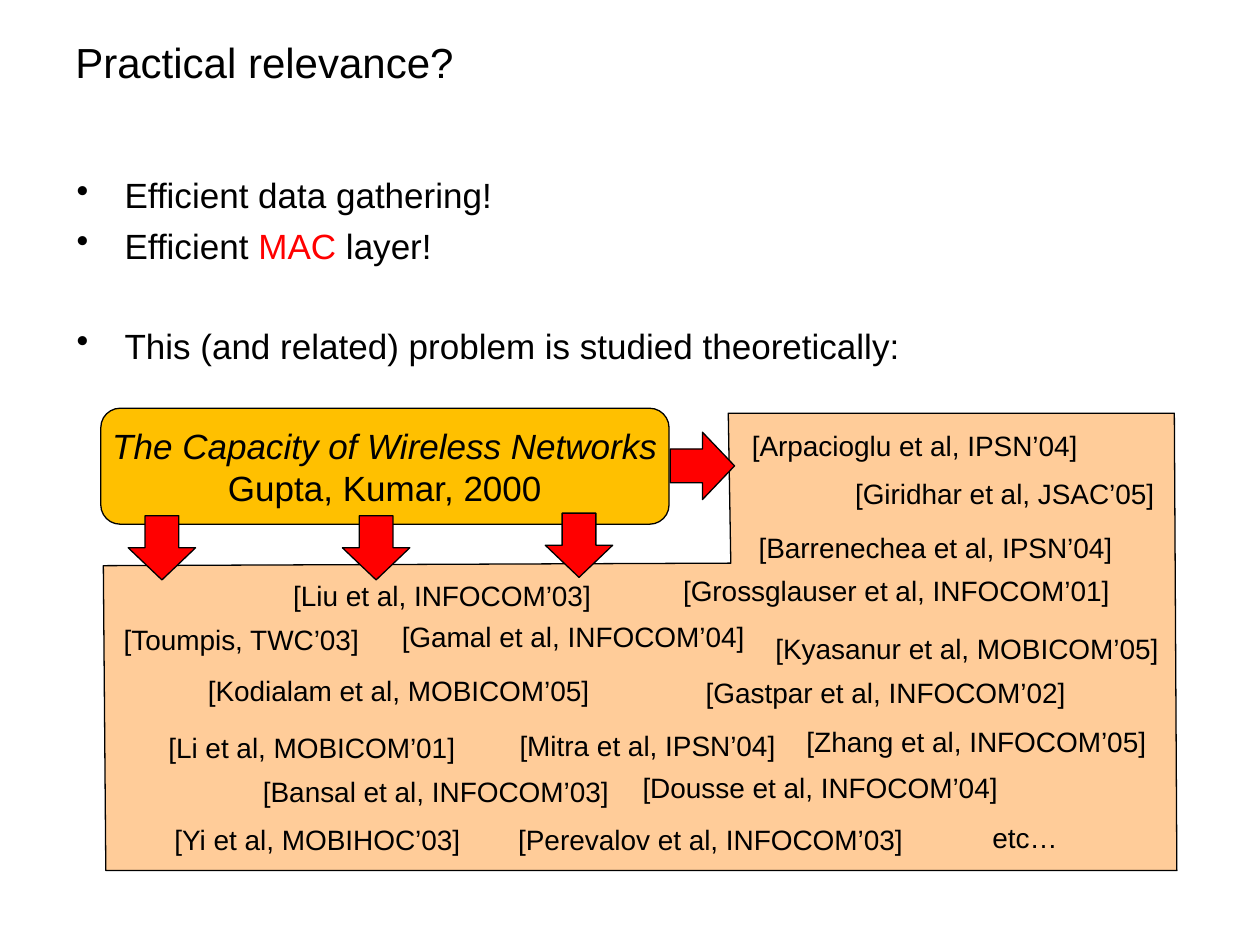
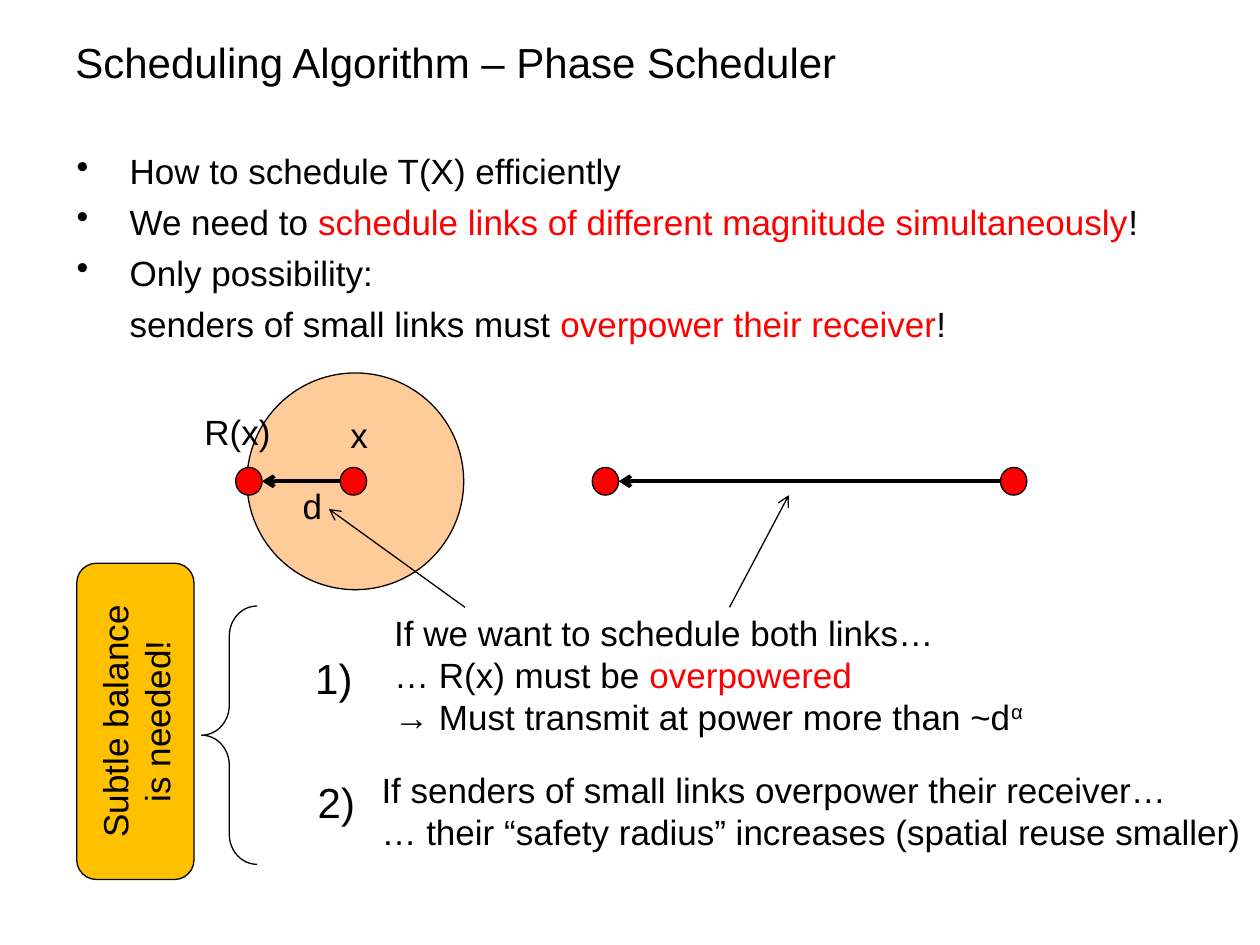
from dataclasses import dataclass
from lxml import etree
from pptx import Presentation
from pptx.dml.color import RGBColor
from pptx.enum.shapes import MSO_CONNECTOR, MSO_SHAPE
from pptx.enum.text import MSO_ANCHOR, PP_ALIGN
from pptx.oxml.ns import qn
from pptx.util import Inches, Pt

STRAIGHT = MSO_CONNECTOR.STRAIGHT
OVAL, BRACE = MSO_SHAPE.OVAL, MSO_SHAPE.LEFT_BRACE
ROUNDED, ARROW = MSO_SHAPE.ROUNDED_RECTANGLE, MSO_SHAPE.RIGHT_ARROW
MIDDLE, TOP = MSO_ANCHOR.MIDDLE, MSO_ANCHOR.TOP
LEFT, CENTER = PP_ALIGN.LEFT, PP_ALIGN.CENTER


@dataclass(frozen=True)
class Theme:
    font: str = "Arial"
    ink: str = "000000"
    accent: str = "FF0000"
    callout: str = "FFC000"
    area: str = "FFCC99"
    title: int = 24
    body: int = 20
    citation: int = 16
    thin: float = 0.75
    thick: float = 2.25
    bullet_gap: int = 5
    section_gap: int = 33


THEME = Theme()
COLUMNS, ROWS, CELL = 100, 75, Inches(0.1)
TITLE_BOX = (5, 2.2, 90, 5.4)
RED, ITALIC, SUPER = "red", "italic", "super"

RELEVANCE = {
    "title": "Practical relevance?",
    "body_top": 13.3,
    "indent": 3.8,
    "bullets": [
        (["Efficient data gathering!"], True, 0),
        (["Efficient ", ("MAC", RED), " layer!"], True, THEME.bullet_gap),
        (["This (and related) problem is studied theoretically:"], True, THEME.section_gap),
    ],
}
SEMINAL_PAPER = [[("The Capacity of Wireless Networks", ITALIC)], ["Gupta, Kumar, 2000"]]
SEMINAL_BOX = (8, 32.4, 45.1, 9.2)
FOLLOW_UP_AREA = [(8.2, 44.9), (8.4, 69.1), (93.4, 69.1), (93.2, 32.8), (57.8, 32.8), (58, 44.7)]
INFLUENCE_ARROWS = [(53.2, 34.3, 0), (43.4, 40.6, 90), (27.3, 40.8, 90), (10.3, 40.8, 90)]
ARROW_SIZE = (5.1, 5.35)
CITATION_HEIGHT = 3.7
CITATIONS = [
    ("[Arpacioglu et al, IPSN’04]", 58.5, 33.5, 28.2),
    ("[Giridhar et al, JSAC’05]", 66.7, 37.3, 26.1),
    ("[Barrenechea et al, IPSN’04]", 59, 41.6, 30.5),
    ("[Grossglauser et al, INFOCOM’01]", 53, 45, 36.3),
    ("[Liu et al, INFOCOM’03]", 22.1, 45.4, 26),
    ("[Toumpis, TWC’03]", 8.7, 48.9, 20.9),
    ("[Gamal et al, INFOCOM’04]", 30.7, 48.7, 29.6),
    ("[Kyasanur et al, MOBICOM’05]", 60.3, 49.6, 32.9),
    ("[Kodialam et al, MOBICOM’05]", 15.3, 53, 32.7),
    ("[Gastpar et al, INFOCOM’02]", 54.8, 53.1, 31),
    ("[Li et al, MOBICOM’01]", 12.2, 57.5, 25.1),
    ("[Mitra et al, IPSN’04]", 40.1, 57.3, 22.6),
    ("[Zhang et al, INFOCOM’05]", 62.8, 57, 29.4),
    ("[Bansal et al, INFOCOM’03]", 19.7, 61, 29.8),
    ("[Dousse et al, INFOCOM’04]", 49.8, 60.7, 30.6),
    ("[Yi et al, MOBIHOC’03]", 12.7, 64.8, 25),
    ("[Perevalov et al, INFOCOM’03]", 39.3, 64.8, 34.2),
    ("etc…", 77.6, 64.6, 7.5),
]

SCHEDULER = {
    "title": "Scheduling Algorithm – Phase Scheduler",
    "body_top": 11.4,
    "indent": 4.2,
    "bullets": [
        (["How to schedule T(X) efficiently"], True, 0),
        (["We need to ", ("schedule links of different magnitude simultaneously", RED), "!"],
         True, THEME.bullet_gap),
        (["Only possibility:"], True, THEME.bullet_gap),
        (["senders of small links must ", ("overpower their receiver", RED), "!"],
         False, THEME.bullet_gap),
    ],
}
LINK_ROW = 38.2
LINKS = [(28.05, 19.75), (80.45, 48.05)]
NODE_SIZE = (2.1, 2.2)
RANGE_CENTER, RANGE_SIZE = 28.2, 17.2
LINK_LABELS = [("R(x)", 15.2, 32.1, 7.3), ("x", 26.8, 32.3, 3.4), ("d", 23, 38, 3.6)]
LABEL_HEIGHT = 4.4
POINTERS = [((57.9, 48.2), (62.6, 39.3)), ((36.9, 48.2), (26.1, 40.4))]
ARGUMENTS = [
    ("1)", (24, 51.3), (30.3, 48, 52.4, 11.1), [
        ["If we want to schedule both links…"],
        ["… R(x) must be ", ("overpowered", RED)],
        ["→ Must transmit at power more than ~d", ("α", SUPER)],
    ]),
    ("2)", (24.2, 61.1), (29.3, 60.5, 70.7, 7.7), [
        ["If senders of small links overpower their receiver…"],
        ["… their “safety radius” increases (spatial reuse smaller)"],
    ]),
]
NUMBER_SIZE = (5, 5)
BRACE_BOX = (16, 48.1, 4.4, 20.5)
BALANCE = [["Subtle balance"], ["is needed!"]]
BALANCE_BOX = (-1.8, 52.6, 25.1, 9.3)


def grid(*cells):
    return [round(cell * CELL) for cell in cells]


def color(value):
    return RGBColor.from_string(value)


def add_paragraph(frame, pieces, size, align=LEFT, first=False):
    paragraph = frame.paragraphs[0] if first else frame.add_paragraph()
    paragraph.alignment = align
    for piece in pieces:
        words, style = (piece, None) if isinstance(piece, str) else piece
        run = paragraph.add_run()
        run.text = words
        if style == RED:
            run.font.color.rgb = color(THEME.accent)
        elif style == ITALIC:
            run.font.italic = True
        elif style == SUPER:
            run.font._element.set("baseline", "30000")
    return paragraph


def set_font(paragraph, size):
    font = paragraph.font
    font.name, font.size = THEME.font, Pt(size)
    font.color.rgb = color(THEME.ink)


def fill_text(frame, lines, size, align=LEFT, anchor=TOP, wrap=False):
    frame.word_wrap, frame.vertical_anchor = wrap, anchor
    for index, pieces in enumerate(lines):
        set_font(add_paragraph(frame, pieces, size, align, index == 0), size)


def add_text(slide, box, lines, size, **options):
    frame = slide.shapes.add_textbox(*grid(*box)).text_frame
    fill_text(frame, lines, size, **options)


def paint(shape, fill):
    shape.shadow.inherit = False
    if fill:
        shape.fill.solid()
        shape.fill.fore_color.rgb = color(fill)
    else:
        shape.fill.background()
    shape.line.color.rgb = color(THEME.ink)
    shape.line.width = Pt(THEME.thin)


def add_shape(slide, kind, box, fill=None, rotation=0):
    shape = slide.shapes.add_shape(kind, *grid(*box))
    paint(shape, fill)
    shape.rotation = rotation
    return shape


def add_callout(slide, box, lines, rotation=0):
    callout = add_shape(slide, ROUNDED, box, THEME.callout, rotation)
    fill_text(callout.text_frame, lines, THEME.body, align=CENTER, anchor=MIDDLE)


def add_arrow(slide, start, end, width):
    arrow = slide.shapes.add_connector(STRAIGHT, *grid(*start, *end))
    arrow.line.color.rgb = color(THEME.ink)
    arrow.line.width = Pt(width)
    properties = arrow._element.spPr
    etree.SubElement(properties.find(qn("a:ln")), qn("a:tailEnd"), type="arrow")
    etree.SubElement(properties, qn("a:effectLst"))


def add_heading(slide, content):
    add_text(slide, TITLE_BOX, [[content["title"]]], THEME.title, anchor=MIDDLE, wrap=True)
    box = (5.1, content["body_top"], 89.8, 17)
    frame = slide.shapes.add_textbox(*grid(*box)).text_frame
    frame.word_wrap = True
    indent = grid(content["indent"])[0]
    for index, (pieces, bulleted, gap) in enumerate(content["bullets"]):
        paragraph = add_paragraph(frame, pieces, THEME.body, first=index == 0)
        paragraph.space_before = Pt(gap)
        properties = paragraph._p.get_or_add_pPr()
        properties.set("marL", str(indent))
        properties.set("indent", str(-indent if bulleted else 0))
        if bulleted:
            etree.SubElement(properties, qn("a:buChar"), char="•")
        set_font(paragraph, THEME.body)


def build_relevance(slide):
    add_heading(slide, RELEVANCE)
    add_callout(slide, SEMINAL_BOX, SEMINAL_PAPER)
    corners = [grid(*corner) for corner in FOLLOW_UP_AREA]
    outline = slide.shapes.build_freeform(*corners[0])
    outline.add_line_segments(corners[1:], close=True)
    paint(outline.convert_to_shape(), THEME.area)
    for left, top, rotation in INFLUENCE_ARROWS:
        add_shape(slide, ARROW, (left, top, *ARROW_SIZE), THEME.accent, rotation)
    for citation, left, top, width in CITATIONS:
        add_text(slide, (left, top, width, CITATION_HEIGHT), [[citation]],
                 THEME.citation, align=CENTER)


def build_scheduler(slide):
    range_box = (RANGE_CENTER - RANGE_SIZE / 2, LINK_ROW - RANGE_SIZE / 2, RANGE_SIZE, RANGE_SIZE)
    add_shape(slide, OVAL, range_box, THEME.area)
    add_heading(slide, SCHEDULER)
    width, height = NODE_SIZE
    for sender, receiver in LINKS:
        for center in (receiver, sender):
            node_box = (center - width / 2, LINK_ROW - height / 2, width, height)
            add_shape(slide, OVAL, node_box, THEME.accent)
        add_arrow(slide, (sender - width / 2, LINK_ROW), (receiver + width / 2, LINK_ROW),
                  THEME.thick)
    for start, end in POINTERS:
        add_arrow(slide, start, end, THEME.thin)
    for label, left, top, label_width in LINK_LABELS:
        add_text(slide, (left, top, label_width, LABEL_HEIGHT), [[label]],
                 THEME.body, align=CENTER)
    for number, corner, box, lines in ARGUMENTS:
        add_text(slide, box, lines, THEME.body)
        add_text(slide, (*corner, *NUMBER_SIZE), [[number]], THEME.title, align=CENTER)
    brace = add_shape(slide, BRACE, BRACE_BOX)
    brace.adjustments[0] = 0.54
    add_callout(slide, BALANCE_BOX, BALANCE, rotation=270)


def main():
    deck = Presentation()
    deck.slide_width, deck.slide_height = COLUMNS * CELL, ROWS * CELL
    blank = deck.slide_layouts[6]
    for build in (build_relevance, build_scheduler):
        build(deck.slides.add_slide(blank))
    deck.save("out.pptx")


if __name__ == "__main__":
    main()
